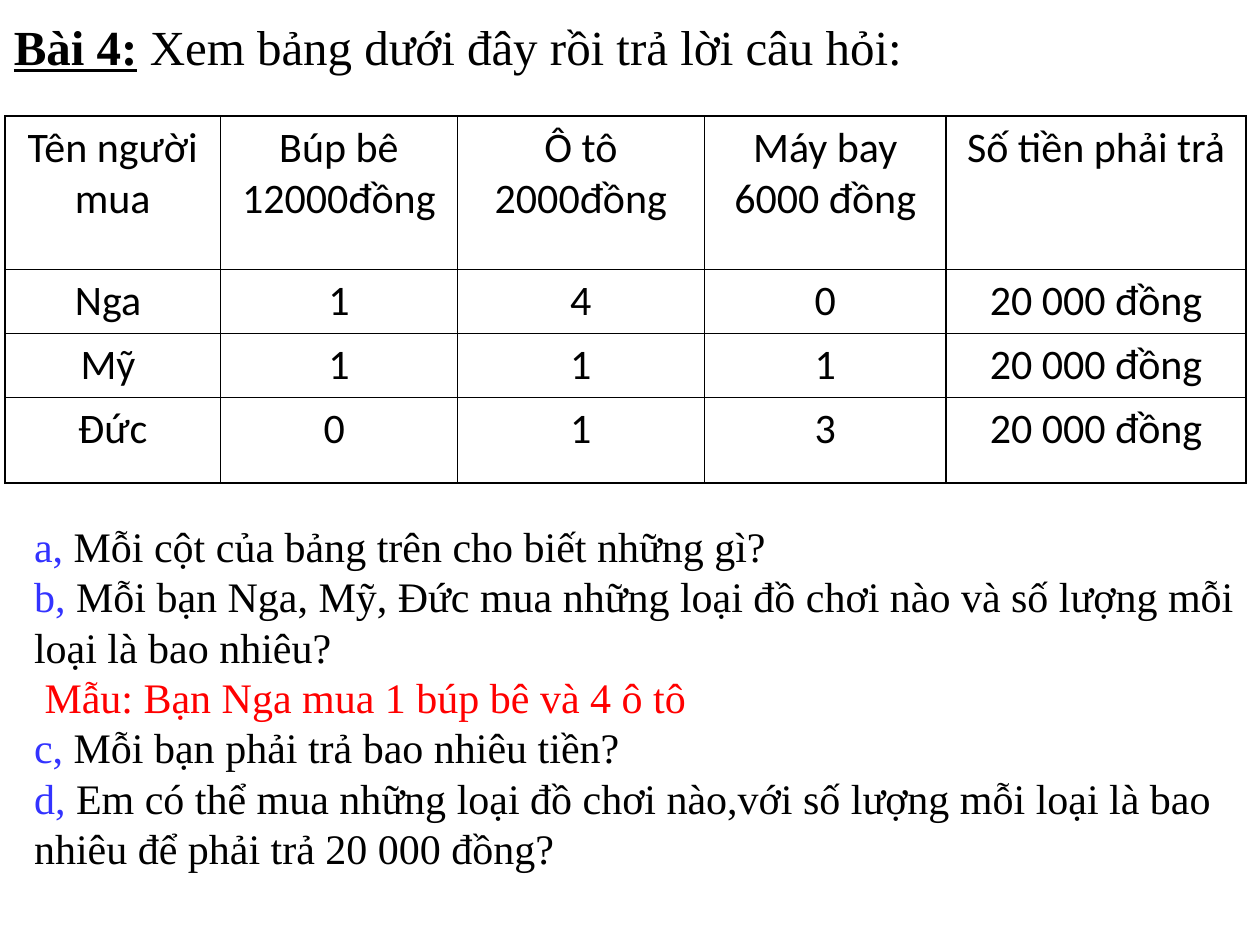
from lxml.etree import SubElement
from pptx import Presentation
from pptx.dml.color import RGBColor
from pptx.enum.text import MSO_ANCHOR as Anchor, MSO_AUTO_SIZE as Fit, PP_ALIGN as Align
from pptx.oxml.ns import qn
from pptx.util import Inches, Pt

SERIF = "Times New Roman"
BLACK, BLUE, RED, WHITE = "000000", "3333FF", "FF0000", "FFFFFF"

COLS = [1.71, 1.88, 1.96, 1.92, 2.38]
ROWS = [1.22, 0.5, 0.5, 0.68]
CELLS = [
    ["Tên người mua", "Búp bê 12000đồng", "Ô tô 2000đồng",
     "Máy bay\n6000 đồng", "Số tiền phải trả"],
    ["Nga ", "1", "4", "0", "20 000 đồng"],
    ["Mỹ ", "1", "1", "1", "20 000 đồng"],
    ["Đức", "0 ", "1", "3", "20 000 đồng"],
]
ITEMS = [
    ("a, ", "Mỗi cột của bảng trên cho biết những gì?", BLACK),
    ("b, ", "Mỗi bạn Nga, Mỹ, Đức mua những loại đồ chơi nào "
            "và số lượng mỗi loại là bao nhiêu?", BLACK),
    (" ", "Mẫu: Bạn Nga mua 1 búp bê và 4 ô tô", RED),
    ("c, ", "Mỗi bạn phải trả bao nhiêu tiền?", BLACK),
    ("d, ", "Em có thể mua những loại đồ chơi nào,với số lượng mỗi loại "
            "là bao nhiêu để phải trả 20 000 đồng?", BLACK),
]


def rgb(code):
    return RGBColor.from_string(code)


def style(run, size, color, face):
    font = run.font
    font.size, font.name = Pt(size), face
    font.color.rgb = rgb(color)


def add_run(para, text, size, color):
    run = para.add_run()
    run.text = text
    style(run, size, color, SERIF)
    return run


def place(shape, left, top, width, height):
    """Move a placeholder and let its text start at the top left."""
    shape.left, shape.top = Inches(left), Inches(top)
    shape.width, shape.height = Inches(width), Inches(height)
    frame = shape.text_frame
    frame.word_wrap = True
    frame.auto_size = Fit.NONE
    frame.vertical_anchor = Anchor.TOP
    return frame


def add_title(slide):
    para = place(slide.shapes.title, 0.01, 0.08, 7.99, 0.57).paragraphs[0]
    para.alignment = Align.LEFT
    label = add_run(para, "Bài 4:", 28, BLACK)
    label.font.bold = label.font.underline = True
    add_run(para, " ", 28, BLACK).font.bold = True
    add_run(para, "Xem bảng dưới đây rồi trả lời câu hỏi:", 28, BLACK)


def add_list(slide):
    frame = place(slide.placeholders[1], 0.17, 4.08, 9.83, 2.93)
    for i, (mark, text, color) in enumerate(ITEMS):
        para = frame.add_paragraph() if i else frame.paragraphs[0]
        para.space_before = Pt(0)
        props = para._p.get_or_add_pPr()
        props.set("marL", "0")
        props.set("indent", "0")
        SubElement(props, qn("a:buNone"))
        add_run(para, mark, 24, BLUE)
        add_run(para, text, 24, color)


def set_border(cell):
    props = cell._tc.get_or_add_tcPr()
    for i, side in enumerate(("lnL", "lnR", "lnT", "lnB")):
        line = props.makeelement(qn("a:" + side), {"w": str(Pt(1))})
        fill = SubElement(line, qn("a:solidFill"))
        SubElement(fill, qn("a:srgbClr"), val=BLACK)
        props.insert(i, line)


def fill_cell(cell, text):
    cell.fill.solid()
    cell.fill.fore_color.rgb = rgb(WHITE)
    set_border(cell)
    cell.text_frame.text = text
    for para in cell.text_frame.paragraphs:
        para.alignment = Align.CENTER
        for run in para.runs:
            style(run, 24, BLACK, "Calibri")
            run.font.bold = False


def add_grid(slide):
    table = slide.shapes.add_table(
        len(ROWS), len(COLS), Inches(0.04), Inches(0.92),
        Inches(sum(COLS)), Inches(sum(ROWS))).table
    for col, width in zip(table.columns, COLS):
        col.width = Inches(width)
    for r, (height, texts) in enumerate(zip(ROWS, CELLS)):
        table.rows[r].height = Inches(height)
        for c, text in enumerate(texts):
            fill_cell(table.cell(r, c), text)


def main():
    deck = Presentation()
    deck.slide_width, deck.slide_height = Inches(10), Inches(7.5)
    slide = deck.slides.add_slide(deck.slide_layouts[1])
    add_title(slide)
    add_grid(slide)
    add_list(slide)
    deck.save("out.pptx")


if __name__ == "__main__":
    main()
